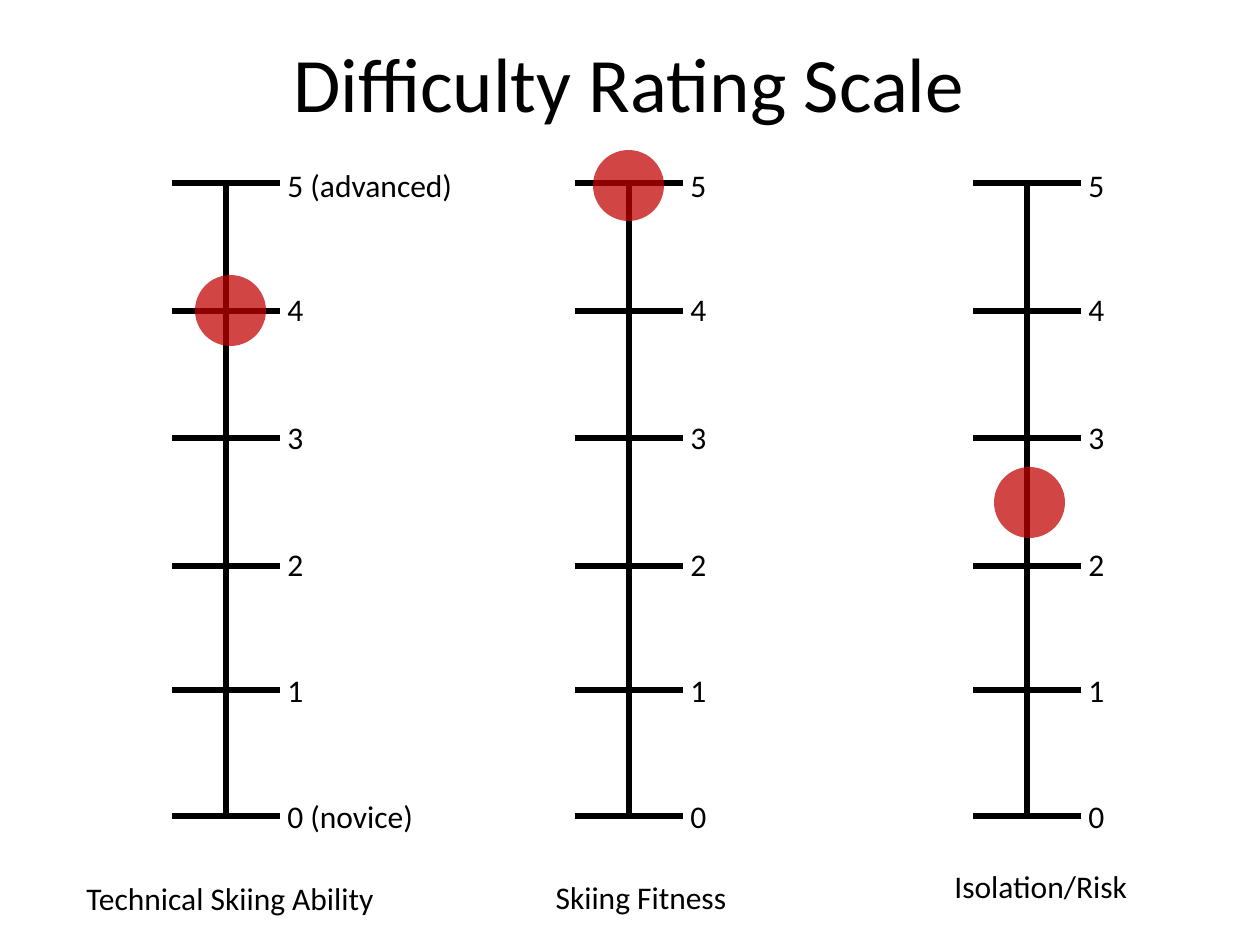
from lxml.etree import SubElement
from pptx import Presentation
from pptx.dml.color import RGBColor
from pptx.enum.shapes import MSO_CONNECTOR, MSO_SHAPE
from pptx.enum.text import MSO_ANCHOR, MSO_AUTO_SIZE, PP_ALIGN
from pptx.oxml.ns import qn
from pptx.util import Pt

BLACK = RGBColor(0, 0, 0)
RED = RGBColor(0xC0, 0, 0)
FONT = "Calibri"
SCALE = 914400 / 126  # EMU per px

# Level, tick height and label top, shared by all scales
LEVELS = [(5, 183, 160), (4, 311, 284), (3, 438, 412),
          (2, 566, 539), (1, 690, 665), (0, 816, 791)]
AXIS_END = 813
TICK = 54  # half the tick length
DOT = 71

# Axis position and notes added to levels
SCALES = [(226, {5: (" (advanced)", 208), 0: (" (novice)", 176)}),
          (629, {}), (1027, {})]
# Left and top of each rating dot
DOTS = [(994, 467), (593, 150), (195, 275)]
# Text, left, top, width, alignment
NAMES = [("Technical Skiing Ability", 74, 873, 345, PP_ALIGN.LEFT),
         ("Skiing Fitness", 519, 872, 244, PP_ALIGN.CENTER),
         ("Isolation/Risk", 942, 861, 244, PP_ALIGN.LEFT)]


def px(*values):
    return [round(v * SCALE) for v in values]


def write(frame, text, size, align):
    frame.text = text
    par = frame.paragraphs[0]
    par.alignment = align
    par.font.name = FONT
    par.font.size = Pt(size)
    par.font.color.rgb = BLACK


def add_text(shapes, text, left, top, width, align=PP_ALIGN.LEFT):
    frame = shapes.add_textbox(*px(left, top, width, 50)).text_frame
    frame.word_wrap = True
    frame.auto_size = MSO_AUTO_SIZE.SHAPE_TO_FIT_TEXT
    write(frame, text, 18, align)


def add_line(shapes, *ends):
    line = shapes.add_connector(MSO_CONNECTOR.STRAIGHT, *px(*ends))
    line.line.color.rgb = BLACK
    line.line.width = Pt(3.5)
    SubElement(line._element.spPr, qn("a:effectLst"))


def add_scale(slide, mid, notes):
    shapes = slide.shapes.add_group_shape().shapes
    add_line(shapes, mid, LEVELS[0][1], mid, AXIS_END)
    for level, tick, top in LEVELS:
        add_line(shapes, mid + TICK, tick, mid - TICK, tick)
        note, width = notes.get(level, ("", 42))
        add_text(shapes, f"{level}{note}", mid + 49, top, width)


def add_dot(slide, left, top):
    dot = slide.shapes.add_shape(MSO_SHAPE.OVAL, *px(left, top, DOT, DOT))
    dot.shadow.inherit = False
    dot.fill.solid()
    dot.fill.fore_color.rgb = RED
    dot.line.fill.background()
    color = dot._element.spPr.find(qn("a:solidFill"))[0]
    SubElement(color, qn("a:alpha"), val="73000")


def add_title(slide, text):
    title = slide.shapes.title
    title.left, title.top, title.width, title.height = px(62, 3, 1134, 157)
    title.text_frame.vertical_anchor = MSO_ANCHOR.MIDDLE
    write(title.text_frame, text, 44, PP_ALIGN.CENTER)


def main():
    deck = Presentation()
    deck.slide_width, deck.slide_height = px(1260, 945)
    slide = deck.slides.add_slide(deck.slide_layouts[5])
    add_title(slide, "Difficulty Rating Scale")

    # Captions below the scales
    for name in NAMES:
        add_text(slide.shapes, *name)

    # Scales, then the rating dots on top
    for mid, notes in SCALES:
        add_scale(slide, mid, notes)
    for left, top in DOTS:
        add_dot(slide, left, top)

    deck.save("out.pptx")


if __name__ == "__main__":
    main()
